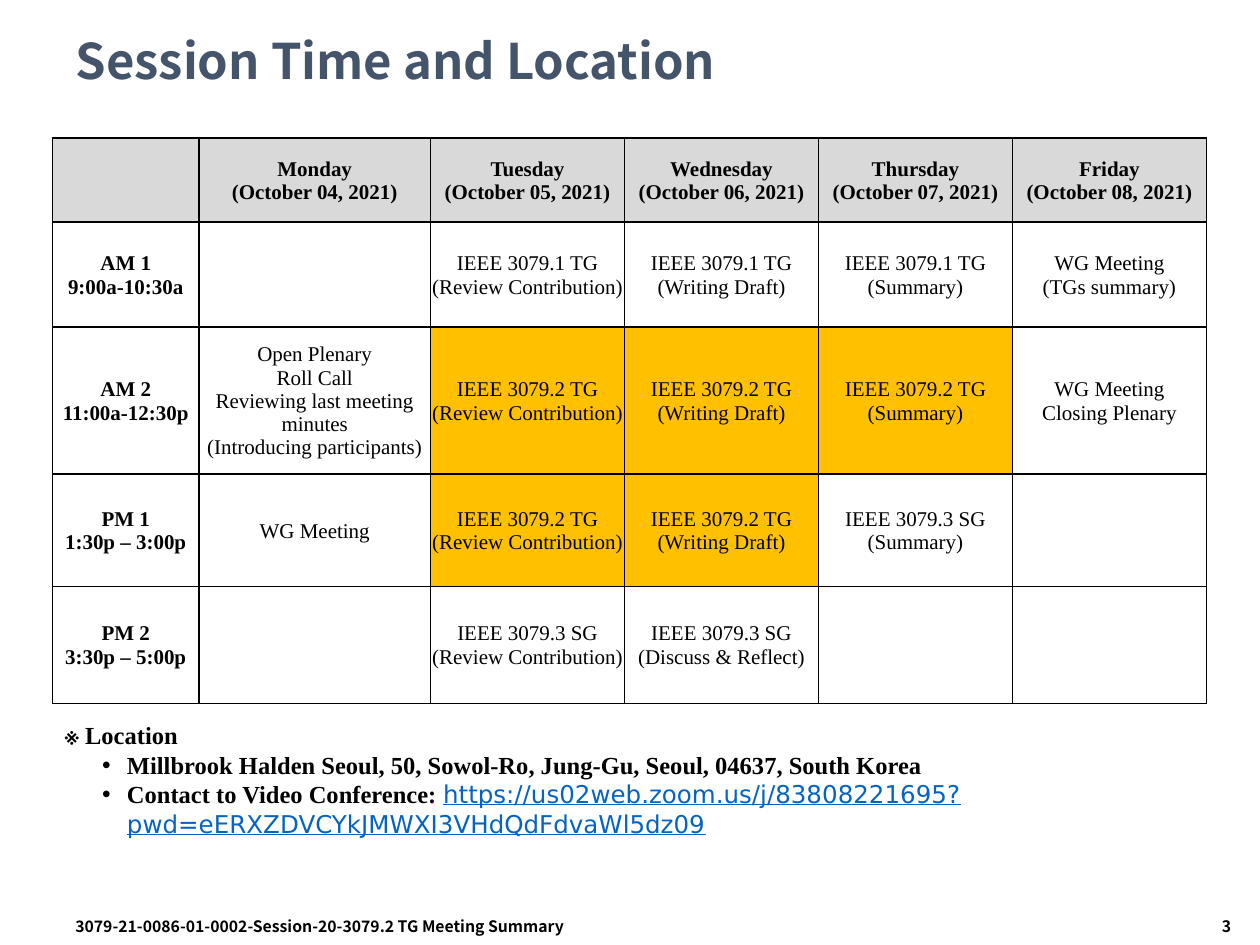
"""Build the session time and location slide."""
from dataclasses import dataclass

from lxml.etree import SubElement
from pptx import Presentation
from pptx.dml.color import RGBColor
from pptx.enum.text import MSO_ANCHOR, MSO_AUTO_SIZE, PP_ALIGN
from pptx.oxml.ns import qn
from pptx.util import Cm, Pt

SANS, SERIF, LINK = "Noto Sans CJK KR", "Times New Roman", "DejaVu Sans"
BLACK, NAVY, BLUE = "000000", "44546A", "0563C1"
GREY, AMBER = "D9D9D9", "FFC000"


@dataclass
class Style:
    size: float
    font: str
    color: str = BLACK
    bold: bool = True
    underline: bool = False


@dataclass
class Slot:
    text: str = ""
    fill: str = ""
    bold: bool = False


def rgb(color: str) -> RGBColor:
    return RGBColor.from_string(color)


def add_run(p, text: str, style: Style) -> None:
    r = p.add_run()
    r.text = text
    r.font.size = Pt(style.size)
    r.font.name = style.font
    r.font.bold = style.bold
    r.font.underline = style.underline
    r.font.color.rgb = rgb(style.color)


def add_box(s, left: float, top: float, width: float, height: float):
    sp = s.shapes.add_textbox(Cm(left), Cm(top), Cm(width), Cm(height))
    tf = sp.text_frame
    tf.word_wrap = True
    return tf


def add_bullet(p, left: float, hanging: float) -> None:
    ppr = p._p.get_or_add_pPr()
    ppr.set("marL", str(Cm(left)))
    ppr.set("indent", str(-Cm(hanging)))
    SubElement(ppr, qn("a:buFont"), typeface="Arial")
    SubElement(ppr, qn("a:buChar"), char="•")


def add_borders(cell) -> None:
    tcpr = cell._tc.get_or_add_tcPr()
    for side in ("a:lnL", "a:lnR", "a:lnT", "a:lnB"):
        ln = SubElement(tcpr, qn(side), w=str(Pt(1)))
        SubElement(SubElement(ln, qn("a:solidFill")), qn("a:srgbClr"), val=BLACK)


def fill_cell(cell, slot: Slot) -> None:
    add_borders(cell)
    if slot.fill:
        cell.fill.solid()
        cell.fill.fore_color.rgb = rgb(slot.fill)
    else:
        cell.fill.background()
    cell.vertical_anchor = MSO_ANCHOR.MIDDLE
    cell.margin_left = cell.margin_right = cell.margin_top = Cm(0.03)
    cell.margin_bottom = 0
    if not slot.text:
        return
    tf = cell.text_frame
    for i, line in enumerate(slot.text.split("\n")):
        p = tf.add_paragraph() if i else tf.paragraphs[0]
        p.alignment = PP_ALIGN.CENTER
        for j, part in enumerate(line.split("\v")):
            if j:
                p.add_line_break()
            add_run(p, part, Style(12, SERIF, bold=slot.bold))


def session(group: str, topic: str, fill: str = "") -> Slot:
    return Slot(f"IEEE 3079.{group}\n({topic})", fill)


def heading(name: str, detail: str, fill: str = "") -> Slot:
    return Slot(f"{name}\n{detail}", fill, True)


REVIEW, DRAFT, SUMMARY = "Review Contribution", "Writing Draft", "Summary"
DAYS = ["Monday", "Tuesday", "Wednesday", "Thursday", "Friday"]
SCHEDULE = [
    [Slot(fill=GREY)] + [heading(day, f"(October {date:02}, 2021)", GREY)
                         for date, day in enumerate(DAYS, 4)],
    [heading("AM 1", "9:00a-10:30a"), Slot(),
     *(session("1 TG", topic) for topic in (REVIEW, DRAFT, SUMMARY)),
     Slot("WG Meeting\n(TGs summary)")],
    [heading("AM 2", "11:00a-12:30p"),
     Slot("Open Plenary\nRoll Call\nReviewing last meeting\vminutes\n(Introducing participants)"),
     *(session("2 TG", topic, AMBER) for topic in (REVIEW, DRAFT, SUMMARY)),
     Slot("WG Meeting\nClosing Plenary")],
    [heading("PM 1", "1:30p – 3:00p"), Slot("WG Meeting"),
     *(session("2 TG", topic, AMBER) for topic in (REVIEW, DRAFT)),
     session("3 SG", SUMMARY), Slot()],
    [heading("PM 2", "3:30p – 5:00p"), Slot(), session("3 SG", REVIEW),
     session("3 SG", "Discuss & Reflect"), Slot(), Slot()],
]
COL_WIDTHS = [2.95, 4.67] + [3.91] * 4
ROW_HEIGHTS = [1.7, 2.11, 2.97, 2.26, 2.36]


def add_title(s) -> None:
    sp = s.shapes.title
    sp.left, sp.top, sp.width, sp.height = Cm(1.27), Cm(0.43), Cm(22.86), Cm(1.7)
    tf = sp.text_frame
    tf.auto_size = MSO_AUTO_SIZE.NONE
    tf.vertical_anchor = MSO_ANCHOR.MIDDLE
    p = tf.paragraphs[0]
    p.alignment = PP_ALIGN.LEFT
    p.line_spacing = 0.9
    add_run(p, "Session Time and Location", Style(28, SANS, NAVY))


def add_schedule(s) -> None:
    table = s.shapes.add_table(
        len(ROW_HEIGHTS), len(COL_WIDTHS), Cm(1.06), Cm(2.78),
        Cm(sum(COL_WIDTHS)), Cm(sum(ROW_HEIGHTS))).table
    table.first_row = table.horz_banding = False
    for column, width in zip(table.columns, COL_WIDTHS):
        column.width = Cm(width)
    for row, height, slots in zip(table.rows, ROW_HEIGHTS, SCHEDULE):
        row.height = Cm(height)
        for cell, slot in zip(row.cells, slots):
            fill_cell(cell, slot)


def add_location(s) -> None:
    tf = add_box(s, 1.06, 14.4, 24.34, 2.64)
    strong = Style(14, SERIF)
    add_run(tf.paragraphs[0], "※ Location", strong)
    items = [
        [("Millbrook Halden Seoul, 50, Sowol-Ro, Jung-Gu, Seoul, 04637, South Korea", strong)],
        [("Contact to Video Conference: ", strong),
         ("https://us02web.zoom.us/j/83808221695?pwd=eERXZDVCYkJMWXI3VHdQdFdvaWl5dz09",
          Style(14, LINK, BLUE, False, True))],
    ]
    for runs in items:
        p = tf.add_paragraph()
        add_bullet(p, 1.25, 0.5)
        for text, style in runs:
            add_run(p, text, style)


def add_footer(s) -> None:
    small = Style(9, SANS)
    p = add_box(s, 1.27, 18.36, 12.9, 0.69).paragraphs[0]
    add_run(p, "3079-21-0086-01-0002-Session-20-3079.2 TG Meeting Summary", small)
    p = add_box(s, 20.96, 18.36, 4.11, 0.69).paragraphs[0]
    p.alignment = PP_ALIGN.RIGHT
    add_run(p, "3", small)


def main() -> None:
    prs = Presentation()
    prs.slide_width, prs.slide_height = Cm(25.4), Cm(19.05)
    s = prs.slides.add_slide(prs.slide_layouts[5])
    add_title(s)
    add_footer(s)
    add_location(s)
    add_schedule(s)
    prs.save("out.pptx")


if __name__ == "__main__":
    main()
